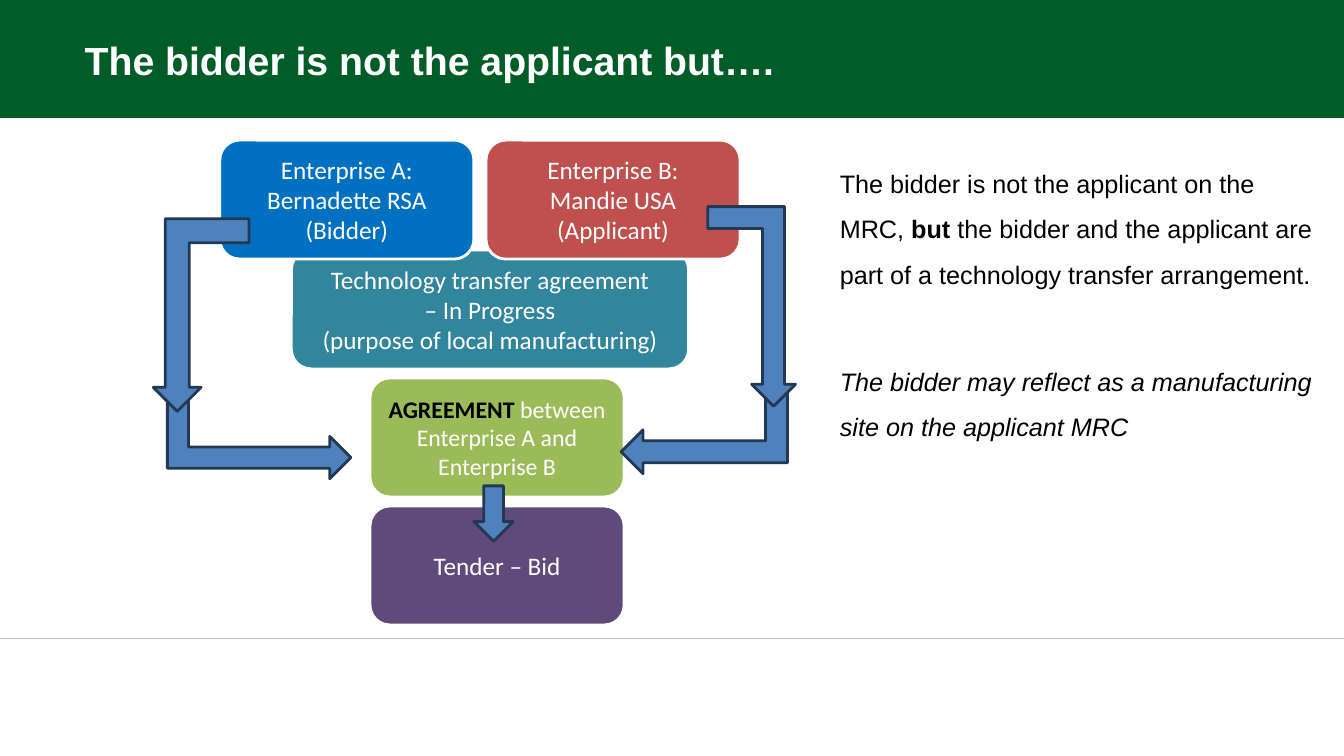
import pptx
import pptx.util
import pptx.dml.color
import pptx.enum.shapes
import pptx.enum.text
import pptx.oxml

PX = 9144  # EMU in one px, 100 px to the inch
SHAPE = pptx.enum.shapes.MSO_SHAPE
ALIGN = pptx.enum.text.PP_ALIGN
COLORS = {
    "banner": "005D28", "rule": "BFBFBF", "white": "FFFFFF", "black": "000000",
    "bidder": "0070C0", "applicant": "C0504D", "transfer": "31859C",
    "agreement": "9BBB59", "tender": "604A7B",
    "arrow": "4F81BD", "arrow_line": "233953",
}


def px(n):
    return pptx.util.Emu(round(n * PX))


def rgb(name):
    return pptx.dml.color.RGBColor.from_string(COLORS[name])


def add_shape(slide, kind, box, fill, line=None):
    s = slide.shapes.add_shape(kind, *map(px, box))
    s.shadow.inherit = False
    s.fill.solid()
    s.fill.fore_color.rgb = rgb(fill)
    if line:
        s.line.color.rgb = rgb(line)
        s.line.width = pptx.util.Pt(2)
    else:
        s.line.fill.background()
    return s


def write(tf, paragraphs, font, size, color, align=ALIGN.LEFT):
    """Fill a frame; each paragraph is a list of (text, font attributes)."""
    tf.word_wrap = True
    for i, runs in enumerate(paragraphs):
        p = tf.add_paragraph() if i else tf.paragraphs[0]
        p.alignment = align
        p.font.name = font
        p.font.size = pptx.util.Pt(size)
        p.font.color.rgb = rgb(color)
        for text, style in runs:
            r = p.add_run()
            r.text = text
            r.font.bold = style.get("bold")
            r.font.italic = style.get("italic")
            if "color" in style:
                r.font.color.rgb = rgb(style["color"])


def add_text(slide, box, paragraphs, size, color):
    tf = slide.shapes.add_textbox(*map(px, box)).text_frame
    tf.margin_left = px(60)
    write(tf, paragraphs, "Arial", size, color)
    return tf


def add_frame(slide, width, height):
    """Draw the title banner and the footer rule."""
    add_shape(slide, SHAPE.RECTANGLE, (0, 0, width, 117), "banner")
    rule = slide.shapes.add_connector(
        pptx.enum.shapes.MSO_CONNECTOR.STRAIGHT,
        px(0), px(height - 117), px(width), px(height - 117))
    rule.line.color.rgb = rgb("rule")
    rule.line.width = pptx.util.Pt(0.75)
    rule._element.spPr.append(pptx.oxml.parse_xml(
        '<a:effectLst xmlns:a="http://schemas.openxmlformats.org/drawingml/2006/main"/>'))
    add_text(slide, (24, 31, 831, 57),
             [[("The bidder is not the applicant but….", {"bold": True})]], 28, "white")


def add_card(slide, box, fill, paragraphs, size=18):
    s = add_shape(slide, SHAPE.ROUNDED_RECTANGLE, box, fill, "white")
    tf = s.text_frame
    tf.margin_left = tf.margin_right = px(7)
    tf.vertical_anchor = pptx.enum.text.MSO_ANCHOR.MIDDLE
    write(tf, paragraphs, "Calibri", size, "white", ALIGN.CENTER)


def add_arrow(slide, kind, box, rotation, flip=False):
    s = add_shape(slide, kind, box, "arrow", "arrow_line")
    s.rotation = rotation
    if flip:
        s._element.spPr.xfrm.set("flipH", "1")


def add_diagram(slide, left, top):
    """Place the five cards, then the arrows, from the diagram's corner."""
    w, h = 252, 118
    middle = left + 149
    cards = [
        ((left + 71, top + 109, 394, h), "transfer", 18,
         [[("Technology transfer agreement", {})], [("– In Progress", {})],
          [("(purpose of local manufacturing)", {})]]),
        ((left, top, w, h), "bidder", 18,
         [[("Enterprise A: Bernadette RSA", {})], [("(Bidder)", {})]]),
        ((middle, top + 236, w, h), "agreement", 17,
         [[("AGREEMENT", {"bold": True, "color": "black"}), (" between", {})],
          [("Enterprise A and Enterprise B", {})]]),
        ((left + 264, top, w, h), "applicant", 18,
         [[("Enterprise B:", {})], [("Mandie USA", {})], [("(Applicant)", {})]]),
        ((middle, top + 363, w, h), "tender", 18, [[("Tender – Bid", {})]]),
    ]
    for box, fill, size, paragraphs in cards:
        add_card(slide, box, fill, paragraphs, size)

    bent = SHAPE.BENT_UP_ARROW
    add_arrow(slide, bent, (left + 437, top + 205, 87, 165), 270, flip=True)
    add_arrow(slide, bent, (left + 484, top + 66, 87, 198), 180, flip=True)
    add_arrow(slide, bent, (left - 3, top + 203, 84, 182), 90)
    add_arrow(slide, bent, (left - 66, top + 78, 95, 191), 180)
    add_arrow(slide, SHAPE.RIGHT_ARROW, (left + 244, top + 351, 55, 39), 90)


def add_explanation(slide, box):
    tf = add_text(slide, box, [
        [("The bidder is not the applicant on the MRC, ", {}), ("but", {"bold": True}),
         (" the bidder and the applicant are part of a technology transfer arrangement.", {})],
        [("The bidder may reflect as a manufacturing site on the applicant MRC",
          {"italic": True})],
    ], 18, "black")
    for p in tf.paragraphs:
        p.line_spacing = 1.5
    tf.paragraphs[1].space_before = pptx.util.Pt(44)


def main():
    width, height = 1333, 750
    prs = pptx.Presentation()
    prs.slide_width, prs.slide_height = px(width), px(height)
    slide = prs.slides.add_slide(prs.slide_layouts[6])
    add_frame(slide, width, height)
    add_diagram(slide, 218, 139)
    add_explanation(slide, (773, 147, 544, 294))
    prs.save("out.pptx")


if __name__ == "__main__":
    main()
